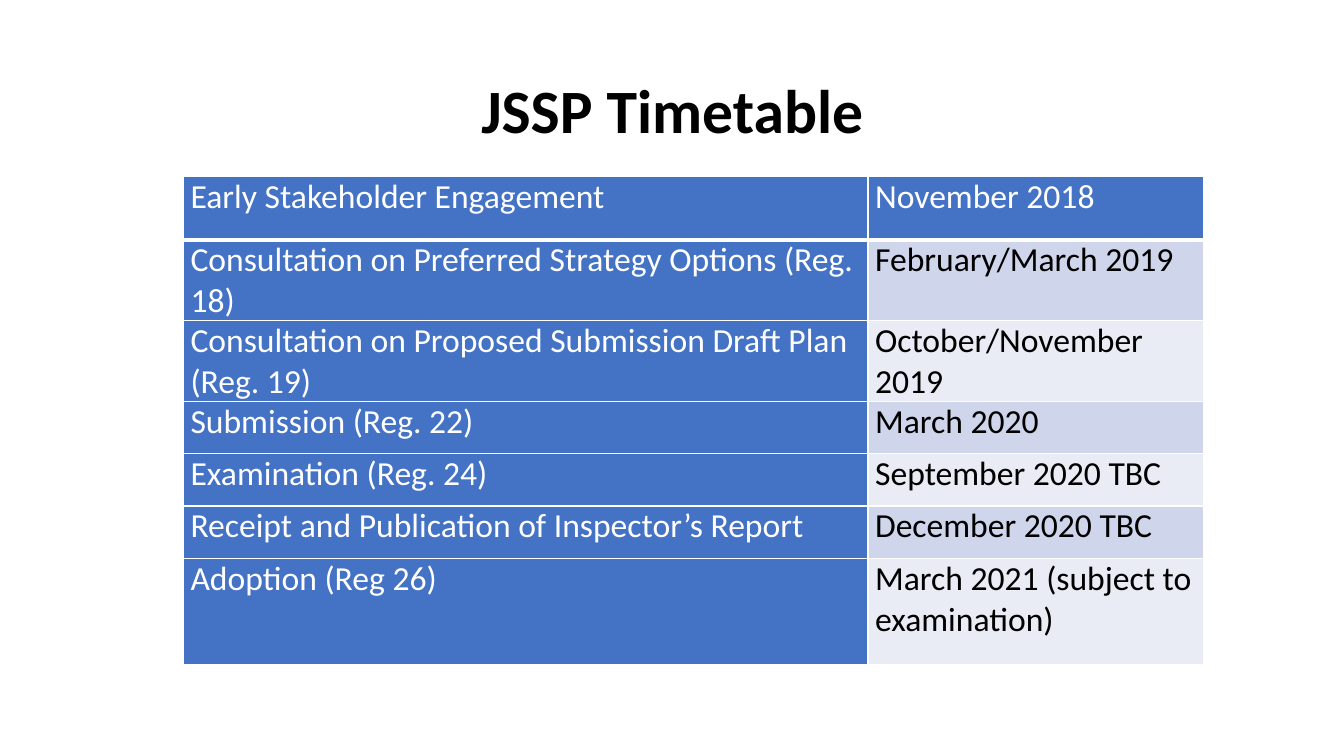
from lxml import etree
from pptx import Presentation
from pptx import util as u
from pptx.dml.color import RGBColor
from pptx.enum import text
from pptx.oxml.ns import qn

WHITE = RGBColor(0xFF, 0xFF, 0xFF)
BLACK = RGBColor(0, 0, 0)
BLUE = RGBColor(0x44, 0x72, 0xC4)
BANDS = RGBColor(0xE9, 0xEB, 0xF5), RGBColor(0xCF, 0xD5, 0xEA)

COLUMN_WIDTHS = 6.79, 3.33
ROW_HEIGHTS = 0.63, 0.52, 0.52, 0.52, 0.52, 0.52, 1.05
STAGES = [
    ("Early Stakeholder Engagement", "November 2018"),
    ("Consultation on Preferred Strategy Options (Reg. 18)", "February/March 2019"),
    ("Consultation on Proposed Submission Draft Plan (Reg. 19)", "October/November 2019"),
    ("Submission (Reg. 22)", "March 2020"),
    ("Examination (Reg. 24)", "September 2020 TBC"),
    ("Receipt and Publication of Inspector’s Report", "December 2020 TBC"),
    ("Adoption (Reg 26)", "March 2021 (subject to examination)"),
]


def write(frame, words, size=24, color=BLACK, bold=False,
          align=text.PP_ALIGN.LEFT, spacing=1.0):
    frame.word_wrap = True
    paragraph = frame.paragraphs[0]
    paragraph.alignment = align
    paragraph.line_spacing = spacing
    run = paragraph.add_run()
    run.text = words
    run.font.name = "Calibri"
    run.font.size = u.Pt(size)
    run.font.bold = bold
    run.font.color.rgb = color


def add_borders(cell, bottom):
    """Draw white cell edges, 1 pt wide apart from the bottom one."""
    properties = cell._tc.get_or_add_tcPr()
    for side, width in zip("LRTB", (1, 1, 1, bottom)):
        edge = etree.SubElement(properties, qn(f"a:ln{side}"), w=str(u.Pt(width)))
        fill = etree.SubElement(edge, qn("a:solidFill"))
        etree.SubElement(fill, qn("a:srgbClr"), val=str(WHITE))


def add_title(slide, left, top, width, height):
    box = slide.shapes.add_textbox(*map(u.Inches, (left, top, width, height)))
    box.text_frame.vertical_anchor = text.MSO_ANCHOR.MIDDLE
    write(box.text_frame, "JSSP Timetable", size=44, bold=True,
          align=text.PP_ALIGN.CENTER, spacing=0.9)


def add_timetable(slide, left, top):
    box = map(u.Inches, (left, top, sum(COLUMN_WIDTHS), sum(ROW_HEIGHTS)))
    table = slide.shapes.add_table(len(STAGES), len(COLUMN_WIDTHS), *box).table
    table.first_col = True
    for column, width in zip(table.columns, COLUMN_WIDTHS):
        column.width = u.Inches(width)
    for row, height in zip(table.rows, ROW_HEIGHTS):
        row.height = u.Inches(height)

    for r, stage in enumerate(STAGES):
        for c, words in enumerate(stage):
            cell = table.cell(r, c)
            is_header = r == 0 or c == 0
            cell.margin_left = cell.margin_right = u.Inches(0.07)
            cell.margin_top = cell.margin_bottom = 0
            add_borders(cell, bottom=3 if r == 0 else 1)
            cell.fill.solid()
            cell.fill.fore_color.rgb = BLUE if is_header else BANDS[r % 2]
            write(cell.text_frame, words, color=WHITE if is_header else BLACK)


def main():
    deck = Presentation()
    deck.slide_width, deck.slide_height = u.Inches(13.33), u.Inches(7.5)
    slide = deck.slides.add_slide(deck.slide_layouts[6])
    add_title(slide, 0.92, 0.4, 11.5, 1.45)
    add_timetable(slide, 1.82, 1.75)
    deck.save("out.pptx")


if __name__ == "__main__":
    main()
